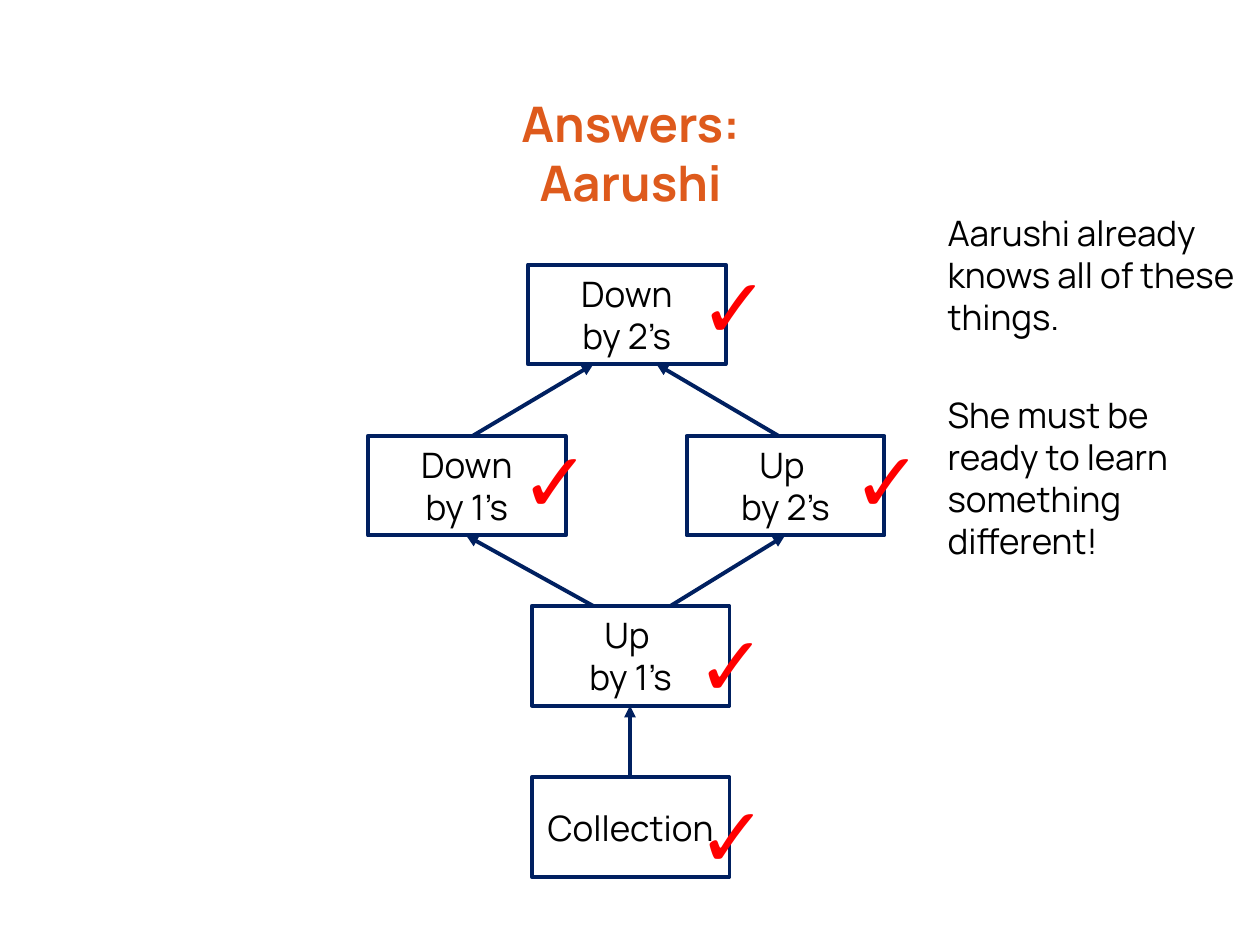
from lxml import etree
from pptx import Presentation
from pptx.dml.color import RGBColor
from pptx.enum.shapes import MSO_CONNECTOR, MSO_SHAPE
from pptx.enum.text import MSO_ANCHOR, PP_ALIGN
from pptx.oxml.ns import qn
from pptx.util import Inches, Pt

RECTANGLE = MSO_SHAPE.RECTANGLE
STRAIGHT = MSO_CONNECTOR.STRAIGHT
TOP, MIDDLE, BOTTOM = MSO_ANCHOR.TOP, MSO_ANCHOR.MIDDLE, MSO_ANCHOR.BOTTOM
LEFT, CENTER = PP_ALIGN.LEFT, PP_ALIGN.CENTER

ORANGE = RGBColor(0xDE, 0x5A, 0x1C)
NAVY = RGBColor(0x00, 0x20, 0x60)
BLACK = RGBColor(0x00, 0x00, 0x00)
RED = RGBColor(0xFF, 0x00, 0x00)

TITLE_FONT = {"name": "Manrope", "size": Pt(28), "bold": True}
BODY_FONT = {"name": "Manrope", "size": Pt(20)}
CHECK_FONT = {"name": "Arial", "size": Pt(48)}

BOX_WIDTH, BOX_HEIGHT = 1.57, 0.79
CHECK_WIDTH, CHECK_HEIGHT = 0.79, 0.91
LINE_WIDTH = Pt(2.25)
NO_INSETS = dict.fromkeys(
    ("margin_left", "margin_top", "margin_right", "margin_bottom"), 0)

# Tops of the four levels, from the hardest skill down
ROWS = (2.1, 3.46, 4.81, 6.17)

# Text, left, level, left and top of the check mark
SKILLS = (
    ("Collection", 4.22, 3, 5.44, 6.17),
    ("Up \vby 1’s", 4.22, 2, 5.43, 4.81),
    ("Down\vby 1’s", 2.92, 1, 4.03, 3.35),
    ("Up \vby 2’s", 5.45, 1, 6.67, 3.35),
    ("Down\vby 2’s", 4.19, 0, 5.45, 1.97),
)

# Lower level, x at its top edge, x at the bottom edge of the level above
ARROWS = (
    (3, 5, 5),
    (2, 4.71, 3.7),
    (2, 5.32, 6.23),
    (1, 3.75, 4.71),
    (1, 6.18, 5.21),
)


class SkillMap:
    def __init__(self, slide):
        self.slide = slide

    def fill_text(self, shape, texts, font, color, align=LEFT, gap=0,
                  **frame_format):
        frame = shape.text_frame
        for name, value in {"word_wrap": True, **frame_format}.items():
            setattr(frame, name, value)
        for index, text in enumerate(texts):
            paragraph = frame.add_paragraph() if index else frame.paragraphs[0]
            paragraph.text = text
            paragraph.alignment = align
            if index:
                paragraph.space_before = Pt(gap)
            for name, value in font.items():
                setattr(paragraph.font, name, value)
            paragraph.font.color.rgb = color

    def text(self, left, top, width, height, texts, font, color, **options):
        shape = self.slide.shapes.add_textbox(
            Inches(left), Inches(top), Inches(width), Inches(height))
        self.fill_text(shape, texts, font, color, **options)

    def box(self, left, top, text):
        shape = self.slide.shapes.add_shape(
            RECTANGLE, Inches(left), Inches(top),
            Inches(BOX_WIDTH), Inches(BOX_HEIGHT))
        shape.shadow.inherit = False
        shape.fill.background()
        shape.line.color.rgb = NAVY
        shape.line.width = LINE_WIDTH
        self.fill_text(shape, [text], BODY_FONT, BLACK,
                       align=CENTER, vertical_anchor=MIDDLE)

    def arrow(self, start_x, start_y, end_x, end_y):
        connector = self.slide.shapes.add_connector(
            STRAIGHT, Inches(start_x), Inches(start_y),
            Inches(end_x), Inches(end_y))
        connector.line.color.rgb = NAVY
        connector.line.width = LINE_WIDTH
        properties = connector._element.spPr
        etree.SubElement(properties.find(qn("a:ln")), qn("a:tailEnd"),
                         type="triangle")
        etree.SubElement(properties, qn("a:effectLst"))


def main():
    presentation = Presentation()
    presentation.slide_width = Inches(10)
    presentation.slide_height = Inches(7.5)
    skill_map = SkillMap(
        presentation.slides.add_slide(presentation.slide_layouts[6]))

    # Title
    skill_map.text(0.4, 0.85, 9.21, 0.83, ["Answers:\vAarushi"], TITLE_FONT,
                   ORANGE, align=CENTER, vertical_anchor=BOTTOM, **NO_INSETS)

    # Skill boxes
    for text, left, level, _, _ in SKILLS:
        skill_map.box(left, ROWS[level], text)

    # Arrows to the next skills
    for level, start_x, end_x in ARROWS:
        skill_map.arrow(start_x, ROWS[level],
                        end_x, ROWS[level - 1] + BOX_HEIGHT)

    # Check marks
    for _, _, _, left, top in SKILLS:
        skill_map.text(left, top, CHECK_WIDTH, CHECK_HEIGHT, ["✓"],
                       CHECK_FONT, RED)

    # Comments
    skill_map.text(7.52, 1.68, 2.31, 3.01,
                   ["Aarushi already knows all of these things.",
                    "She must be ready to learn something different!"],
                   BODY_FONT, BLACK, gap=32, vertical_anchor=TOP, **NO_INSETS)

    presentation.save("out.pptx")


if __name__ == "__main__":
    main()
